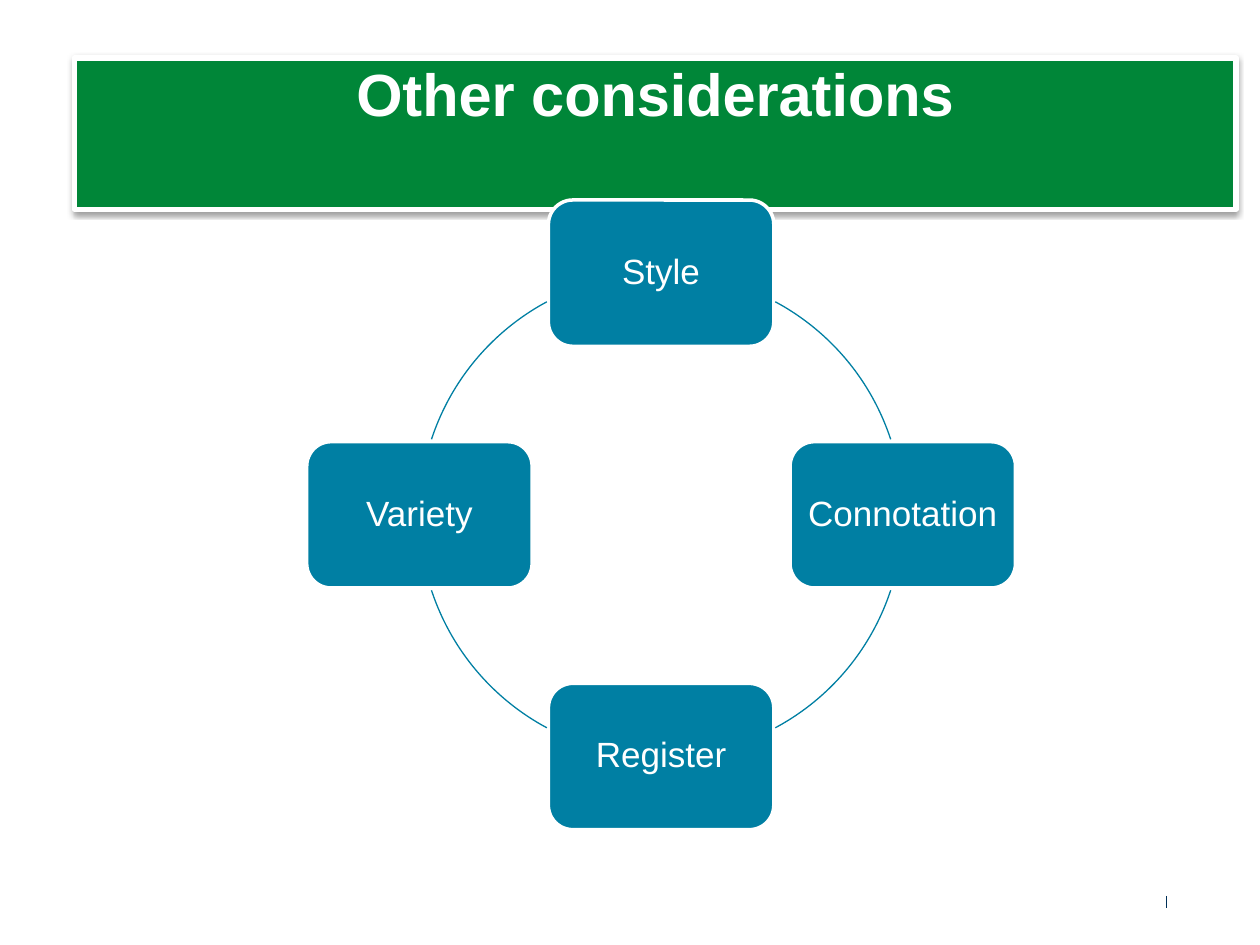
import math

from lxml import etree
from pptx import Presentation
from pptx.dml.color import RGBColor
from pptx.enum import shapes, text
from pptx.oxml import ns
from pptx.util import Pt

COLORS = {"green": "008638", "teal": "007FA3", "navy": "003057", "white": "FFFFFF", "black": "000000"}
CENTER_X, CENTER_Y, RADIUS = 377.8, 294.2, 138.1
BOX_WIDTH, BOX_HEIGHT = 128.8, 83.6
ARC_START, ARC_END = 18.2, 61.8


class SlideBuilder:
    def __init__(self, slide, font="Arial"):
        self.slide = slide
        self.font = font

    def color(self, name):
        return RGBColor.from_string(COLORS[name])

    def outline(self, shape, color, width):
        shape.line.color.rgb = self.color(color)
        shape.line.width = Pt(width)

    def shape(self, kind, left, top, width, height, fill, line, line_width):
        shape = self.slide.shapes.add_shape(kind, Pt(left), Pt(top), Pt(width), Pt(height))
        shape.shadow.inherit = False
        if fill:
            shape.fill.solid()
            shape.fill.fore_color.rgb = self.color(fill)
        else:
            shape.fill.background()
        self.outline(shape, line, line_width)
        return shape

    def label(self, shape, words, size, bold, spacing, anchor, inset):
        frame = shape.text_frame
        frame.text = words
        frame.word_wrap = True
        frame.vertical_anchor = anchor
        frame.margin_left = frame.margin_right = Pt(inset)
        frame.margin_top = frame.margin_bottom = Pt(inset)
        paragraph = frame.paragraphs[0]
        paragraph.alignment = text.PP_ALIGN.CENTER
        paragraph.line_spacing = spacing
        font = paragraph.runs[0].font
        font.name, font.size, font.bold = self.font, Pt(size), bold
        font.color.rgb = self.color("white")

    def drop_shadow(self, shape, blur, distance, opacity):
        effects = shape.element.spPr.find(ns.qn("a:effectLst"))
        shadow = etree.SubElement(effects, ns.qn("a:outerShdw"), blurRad=str(Pt(blur)),
                                  dist=str(Pt(distance)), dir="5400000", rotWithShape="0")
        color = etree.SubElement(shadow, ns.qn("a:srgbClr"), val=COLORS["black"])
        etree.SubElement(color, ns.qn("a:alpha"), val=str(opacity * 1000))

    def title(self, words):
        banner = self.shape(shapes.MSO_SHAPE.RECTANGLE, 42.5, 33.2, 663.8, 86.4, "green", "white", 3)
        self.drop_shadow(banner, 3.1, 1.6, 38)
        self.label(banner, words, 34, True, Pt(40), text.MSO_ANCHOR.TOP, 0)

    def box(self, words, center_x, center_y):
        box = self.shape(shapes.MSO_SHAPE.ROUNDED_RECTANGLE, center_x - BOX_WIDTH / 2,
                         center_y - BOX_HEIGHT / 2, BOX_WIDTH, BOX_HEIGHT, "teal", "white", 2)
        self.label(box, words, 20, False, 0.9, text.MSO_ANCHOR.MIDDLE, 6)

    def arc(self, start, end):
        arc = self.shape(shapes.MSO_SHAPE.ARC, CENTER_X - RADIUS, CENTER_Y - RADIUS,
                         2 * RADIUS, 2 * RADIUS, None, "teal", 0.75)
        for index, degrees in enumerate((start, end)):
            arc.adjustments[index] = degrees * 0.6

    def rule(self, x, top, bottom):
        rule = self.slide.shapes.add_connector(shapes.MSO_CONNECTOR.STRAIGHT, Pt(x), Pt(top), Pt(x), Pt(bottom))
        self.outline(rule, "navy", 0.5)
        etree.SubElement(rule._element.spPr, ns.qn("a:effectLst"))


def main():
    presentation = Presentation()
    presentation.slide_width, presentation.slide_height = Pt(720), Pt(540)
    builder = SlideBuilder(presentation.slides.add_slide(presentation.slide_layouts[6]))

    builder.rule(666.6, 512, 519)
    builder.title("Other considerations")

    for index, words in enumerate(["Style", "Connotation", "Register", "Variety"]):
        angle = math.radians(90 * index - 90)
        builder.box(words, CENTER_X + RADIUS * math.cos(angle), CENTER_Y + RADIUS * math.sin(angle))

    for quadrant in range(4):
        start, end = (ARC_START, ARC_END) if quadrant % 2 == 0 else (90 - ARC_END, 90 - ARC_START)
        builder.arc(90 * quadrant + start, 90 * quadrant + end)

    presentation.save("out.pptx")


if __name__ == "__main__":
    main()
